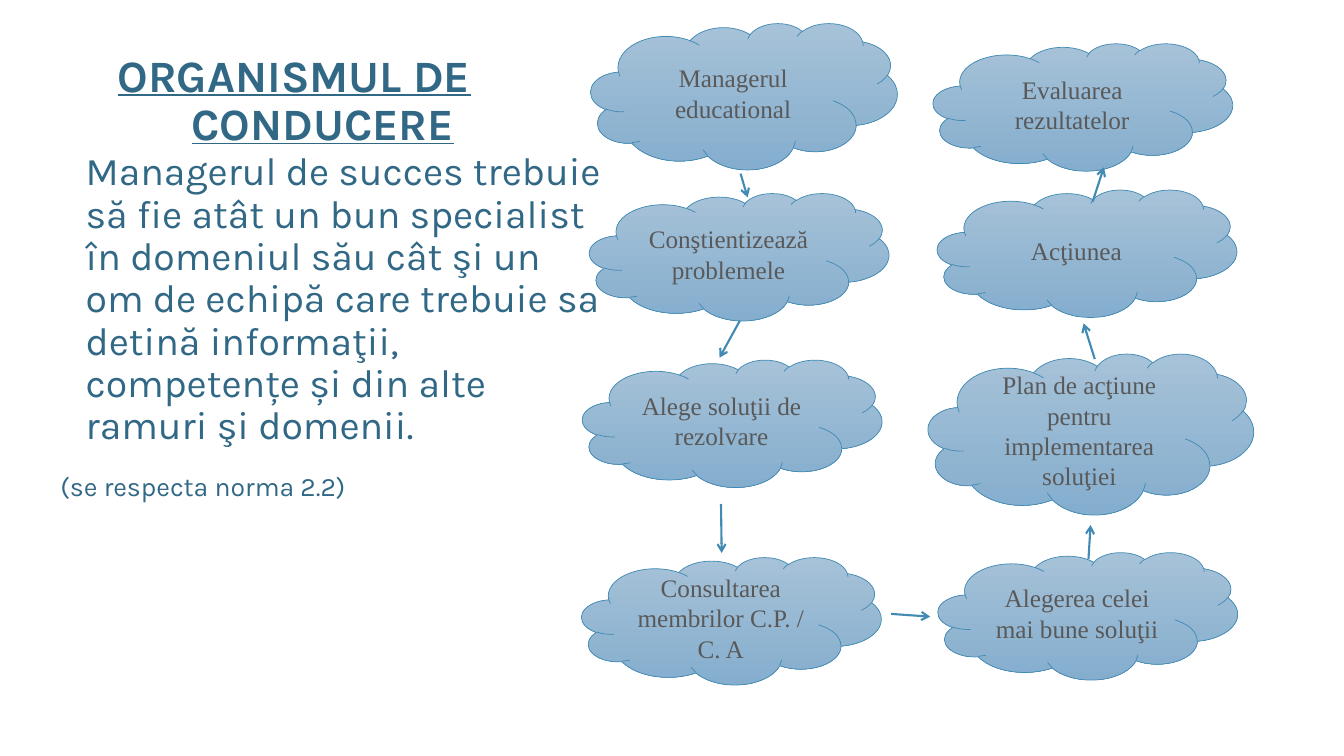
from lxml import etree
from pptx import Presentation
from pptx.dml.color import RGBColor
from pptx.enum.shapes import MSO_CONNECTOR, MSO_SHAPE
from pptx.enum.text import MSO_ANCHOR, MSO_AUTO_SIZE, PP_ALIGN
from pptx.oxml.ns import qn
from pptx.util import Pt

CLOUD, STRAIGHT = MSO_SHAPE.CLOUD, MSO_CONNECTOR.STRAIGHT
LEFT, CENTER = PP_ALIGN.LEFT, PP_ALIGN.CENTER
TOP, MIDDLE, BOTTOM = MSO_ANCHOR.TOP, MSO_ANCHOR.MIDDLE, MSO_ANCHOR.BOTTOM
NO_AUTOFIT = MSO_AUTO_SIZE.NONE

HEADING = RGBColor(0x31, 0x68, 0x86)
CLOUD_TEXT = RGBColor(0x59, 0x59, 0x59)
CLOUD_TOP = RGBColor(0xA6, 0xC2, 0xD8)
CLOUD_BOTTOM = RGBColor(0x85, 0xAE, 0xCE)
LINE = RGBColor(0x41, 0x8A, 0xB3)

TITLE_FONT = {"name": "Karla", "size": Pt(32), "bold": True, "underline": True}
BODY_FONT = {"name": "Karla", "size": Pt(28)}
NOTE_FONT = {"name": "Karla", "size": Pt(19)}
CLOUD_FONT = {"name": "Times New Roman", "size": Pt(18)}

TITLE_BOX = (-18, 29.5, 497.5, 81.5)
BODY_BOX = (32.5, 105, 405.5, 327.5)
FLOW_BOX = (415, 16, 481, 473)

BODY = [
    ("Managerul de succes trebuie să fie atât un bun specialist în domeniul său "
     "cât şi un om de echipă care trebuie sa detină informaţii, competențe și "
     "din alte ramuri şi domenii.", BODY_FONT, 21.5, 0),
    ("(se respecta norma 2.2)", NOTE_FONT, 3.5, 18),
]
STEP_SIZE = (214, 91)
STEPS = [
    ("Managerul educational", 7, 0.5, (219, 104.5)),
    ("Conştientizează problemele", 6, 122, STEP_SIZE),
    ("Alege soluţii de rezolvare", 1, 241, STEP_SIZE),
    ("Consultarea membrilor C.P. / C. A", 0.5, 382, STEP_SIZE),
    ("Alegerea celei mai bune soluţii", 255, 378.5, STEP_SIZE),
    ("Plan de acţiune pentru implementarea soluţiei", 248, 236.5, (232.5, 115)),
    ("Acţiunea", 254.5, 119.5, STEP_SIZE),
    ("Evaluarea rezultatelor", 251.5, 15, STEP_SIZE),
]
ARROWS = [
    (114, 108, 119, 125),
    (113.5, 213, 99, 239.5),
    (100, 344, 100.5, 379),
    (221.5, 422.5, 249.5, 424.5),
    (362.5, 383.5, 364, 359),
    (367, 240.5, 359, 215),
    (365.5, 128, 373.5, 103.5),
]


def write(p, text, font, color, align):
    """Put one formatted run in a paragraph."""
    p.alignment = align
    r = p.add_run()
    r.text = text
    for name, value in font.items():
        setattr(r.font, name, value)
    r.font.color.rgb = color


def place(sp, box, anchor):
    """Move a placeholder to its box and return its text frame."""
    sp.left, sp.top, sp.width, sp.height = map(Pt, box)
    tf = sp.text_frame
    for name, value in {"word_wrap": True, "auto_size": NO_AUTOFIT,
                        "vertical_anchor": anchor}.items():
        setattr(tf, name, value)
    return tf


def build_title(sp, box):
    """Fill the title, underlining its first line up to the right tab stop."""
    tf = place(sp, box, BOTTOM)
    tf.margin_left = tf.margin_right = Pt(102)
    p = tf.paragraphs[0]
    tabs = etree.SubElement(p._p.get_or_add_pPr(), qn("a:tabLst"))
    etree.SubElement(tabs, qn("a:tab"), pos=str(Pt(box[2] - 205.5)), algn="l")
    write(p, "ORGANISMUL DE\t", TITLE_FONT, HEADING, LEFT)
    write(tf.add_paragraph(), "CONDUCERE", TITLE_FONT, HEADING, CENTER)
    for p in tf.paragraphs:
        p.line_spacing, p.space_before = 0.9, Pt(0)


def build_body(sp, box):
    """Fill the body with the indented statement and its note."""
    tf = place(sp, box, TOP)
    for i, (text, font, indent, before) in enumerate(BODY):
        p = tf.add_paragraph() if i else tf.paragraphs[0]
        pPr = p._p.get_or_add_pPr()
        pPr.set("marL", str(Pt(indent)))
        pPr.set("indent", "0")
        etree.SubElement(pPr, qn("a:buNone"))
        p.line_spacing, p.space_before = 0.9, Pt(before)
        write(p, text, font, HEADING, LEFT)


def add_cloud(slide, text, left, top, size):
    """Draw one step of the flow."""
    sp = slide.shapes.add_shape(CLOUD, *map(Pt, (left, top, *size)))
    sp.shadow.inherit = False
    sp.fill.gradient()
    sp.fill.gradient_angle = 270
    for stop, color in zip(sp.fill.gradient_stops, (CLOUD_TOP, CLOUD_BOTTOM)):
        stop.color.rgb = color
    sp.line.color.rgb = LINE
    sp.line.width = Pt(0.5)
    tf = sp.text_frame
    tf.word_wrap, tf.vertical_anchor = True, MIDDLE
    write(tf.paragraphs[0], text, CLOUD_FONT, CLOUD_TEXT, CENTER)


def add_arrow(slide, x1, y1, x2, y2):
    """Draw an open-headed arrow between two points."""
    sp = slide.shapes.add_connector(STRAIGHT, *map(Pt, (x1, y1, x2, y2)))
    sp.line.color.rgb = LINE
    sp.line.width = Pt(1.5)
    etree.SubElement(sp.line._get_or_add_ln(), qn("a:tailEnd"), type="arrow")
    etree.SubElement(sp._element.spPr, qn("a:effectLst"))


def build_flow(slide, box):
    """Place the clouds and arrows relative to the box."""
    x, y = box[:2]
    for text, left, top, size in STEPS:
        add_cloud(slide, text, x + left, y + top, size)
    for x1, y1, x2, y2 in ARROWS:
        add_arrow(slide, x + x1, y + y1, x + x2, y + y2)


def main():
    """Build and save the slide."""
    prs = Presentation()
    prs.slide_width, prs.slide_height = Pt(960), Pt(540)
    slide = prs.slides.add_slide(prs.slide_layouts[1])
    build_title(slide.shapes.title, TITLE_BOX)
    build_body(slide.placeholders[1], BODY_BOX)
    build_flow(slide, FLOW_BOX)
    prs.save("out.pptx")


if __name__ == "__main__":
    main()
